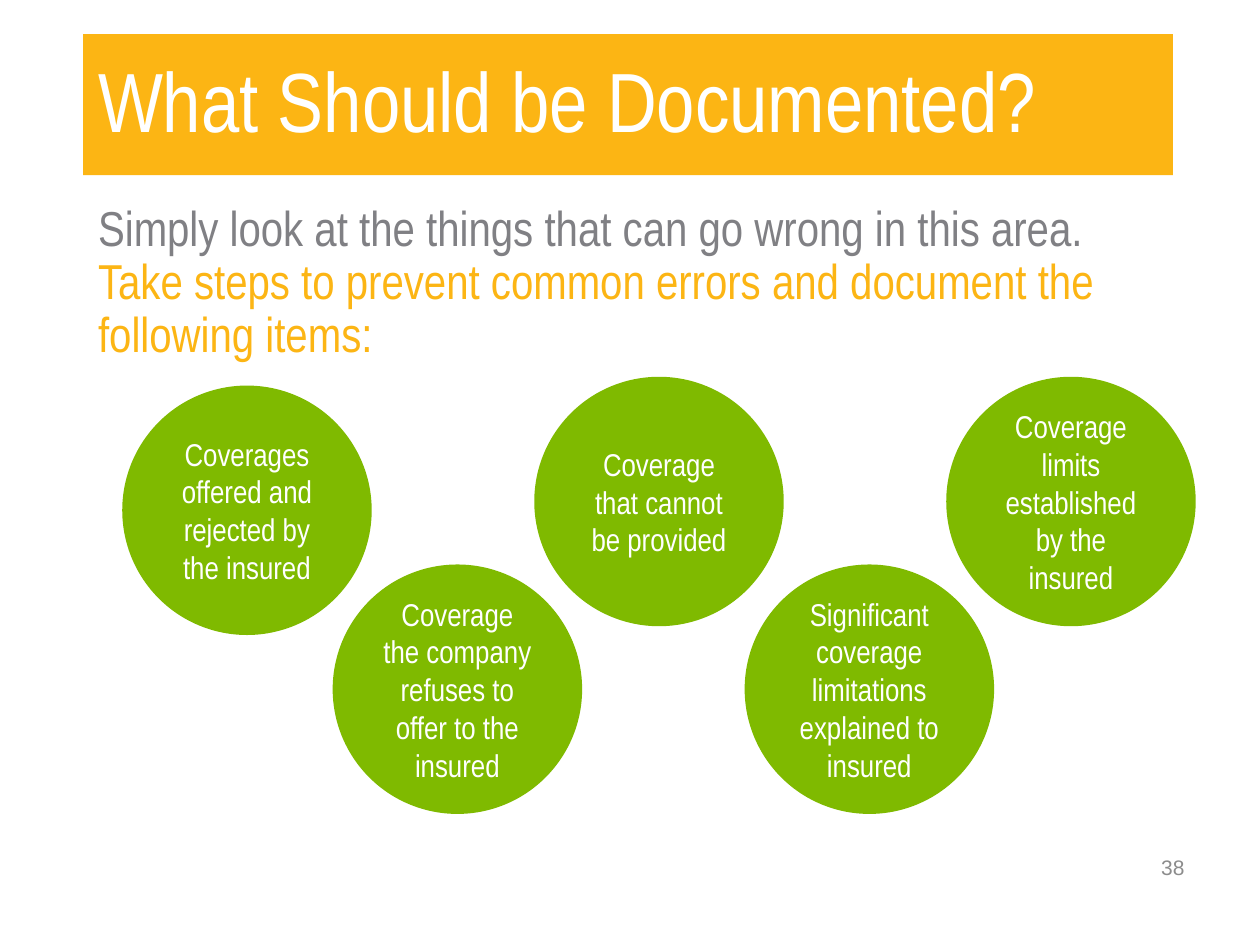
from pptx import Presentation
from pptx.dml.color import RGBColor
from pptx.enum import shapes, text
from pptx.util import Inches, Pt

ORANGE, GREEN, GRAY, WHITE = "FCB514", "7FBA00", "808084", "FFFFFF"
NARROW = "Arial Narrow"
MIDDLE, TOP = text.MSO_ANCHOR.MIDDLE, text.MSO_ANCHOR.TOP
LEFT, CENTER, RIGHT = text.PP_ALIGN.LEFT, text.PP_ALIGN.CENTER, text.PP_ALIGN.RIGHT


def rgb(value):
    return RGBColor.from_string(value)


def write(sp, runs, size, font=NARROW, align=LEFT, anchor=MIDDLE, spacing=None):
    """Fill a shape with one paragraph made of (words, colour) runs."""
    tf = sp.text_frame
    tf.word_wrap = True
    tf.vertical_anchor = anchor
    p = tf.paragraphs[0]
    p.alignment = align
    p.line_spacing = spacing
    p.font.name = font
    p.font.size = Pt(size)
    for words, color in runs:
        r = p.add_run()
        r.text = words
        r.font.color.rgb = rgb(color)


prs = Presentation()
prs.slide_width, prs.slide_height = Inches(10), Inches(7.5)
s = prs.slides.add_slide(prs.slide_layouts[6])

# Title band
band = s.shapes.add_shape(shapes.MSO_SHAPE.RECTANGLE,
                          Inches(0.66), Inches(0.27), Inches(8.65), Inches(1.12))
band.shadow.inherit = False
band.fill.solid()
band.fill.fore_color.rgb = rgb(ORANGE)
band.line.fill.background()

# Title, introduction and page number
title = s.shapes.add_textbox(Inches(0.68), Inches(0.16), Inches(8.62), Inches(1.36))
write(title, [("What Should be Documented?", WHITE)], 48, spacing=0.9)

intro = s.shapes.add_textbox(Inches(0.68), Inches(1.57), Inches(8.62), Inches(1.4))
write(intro, [
    ("Simply look at the things that can go wrong in this area. ", GRAY),
    ("Take steps to prevent common errors and document the following items:", ORANGE),
], 28, anchor=TOP, spacing=0.9)

number = s.shapes.add_textbox(Inches(7.17), Inches(6.68), Inches(2.33), Inches(0.4))
write(number, [("38", "8C8C8C")], 12, font="Arial", align=RIGHT)

# Circles with the items to document
items = [
    (0.97, 3.06, "Coverages offered and rejected by the insured"),
    (2.64, 4.48, "Coverage the company refuses to offer to the insured"),
    (4.24, 2.99, "Coverage that cannot be provided"),
    (7.51, 2.99, "Coverage limits established by the insured"),
    (5.91, 4.48, "Significant coverage limitations explained to insured"),
]
diameter = Inches(1.98)
for left, top, words in items:
    circle = s.shapes.add_shape(shapes.MSO_SHAPE.OVAL,
                                Inches(left), Inches(top), diameter, diameter)
    circle.shadow.inherit = False
    circle.fill.solid()
    circle.fill.fore_color.rgb = rgb(GREEN)
    circle.line.fill.background()
    write(circle, [(words, WHITE)], 18, align=CENTER)

prs.save("out.pptx")
